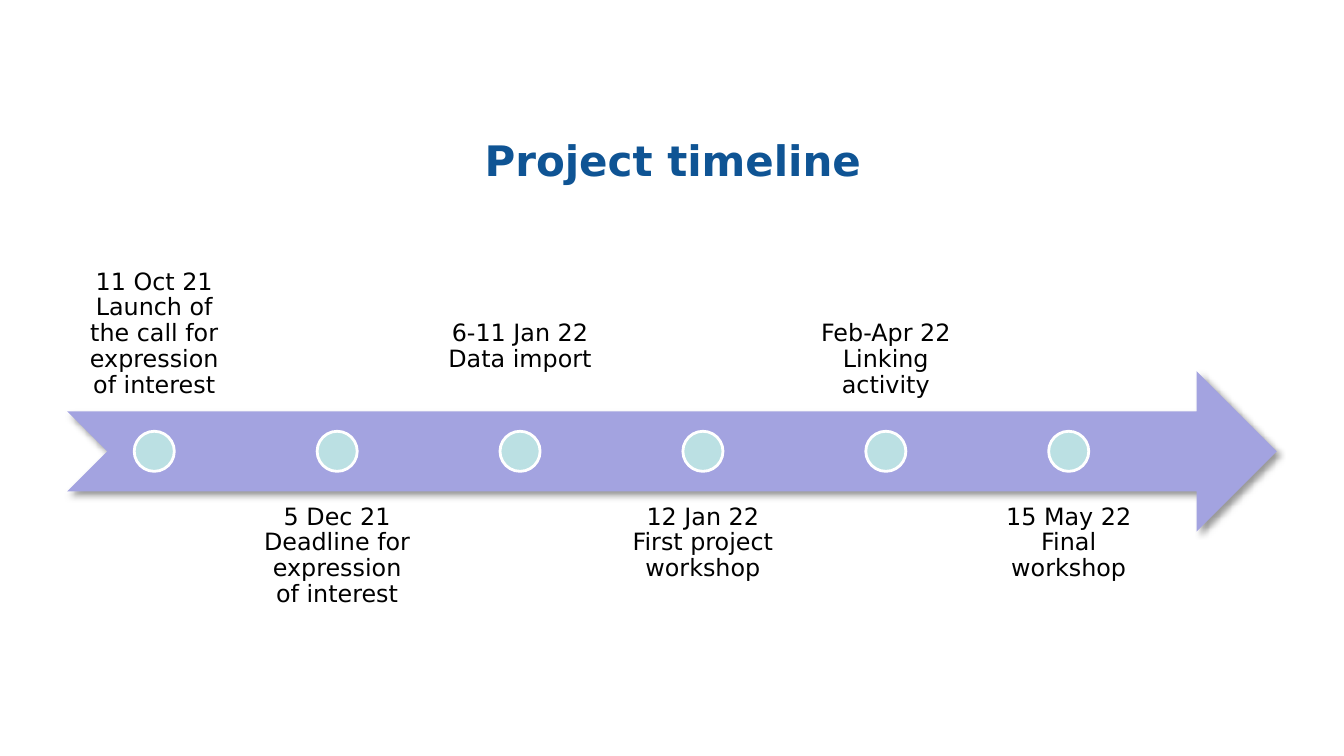
"""Build the project timeline slide."""
from dataclasses import dataclass

from lxml.etree import SubElement
from pptx import Presentation
from pptx.dml.color import RGBColor
from pptx.enum.shapes import MSO_SHAPE
from pptx.enum.text import MSO_ANCHOR, PP_ALIGN
from pptx.oxml.ns import qn
from pptx.util import Inches, Pt


@dataclass(frozen=True)
class Theme:
    font: str = "DejaVu Sans"
    title: str = "0F5494"
    text: str = "000000"
    arrow: str = "A3A3E0"
    dot: str = "BBE0E3"
    ring: str = "FFFFFF"
    shade: str = "000000"
    big: int = 30
    small: int = 17
    edge: int = 2


@dataclass(frozen=True)
class Box:
    left: float
    top: float
    width: float
    height: float

    def place(self) -> tuple:
        return tuple(map(Inches, (self.left, self.top, self.width, self.height)))


@dataclass(frozen=True)
class Event:
    text: str
    lift: float = 0


WIDE, HIGH = 13.33, 7.5
LOOK = Theme()
LEFT, SPAN = WIDE * 0.05, WIDE * 0.9
BAND = HIGH * 0.212
ROW = BAND * 0.75
TOP = HIGH * 0.332
LABEL = SPAN * 0.144
STEP = LABEL * 1.05
DOT = BAND / 4
LINE = 0.255

EVENTS = (
    Event("11 Oct 21 Launch of the call for expression of interest"),
    Event("5 Dec 21 Deadline for expression of interest"),
    Event("6-11 Jan 22 Data import", LINE),
    Event("12 Jan 22 First project workshop"),
    Event("Feb-Apr 22 Linking activity"),
    Event("15 May 22 Final workshop"),
)


def write(slide, box: Box, text: str, size: int, color: str,
          anchor: MSO_ANCHOR, bold: bool = False, space: float = 1.0) -> None:
    frame = slide.shapes.add_textbox(*box.place()).text_frame
    frame.word_wrap = True
    frame.vertical_anchor = anchor
    frame.margin_left = frame.margin_right = Inches(0.12)
    frame.margin_top = frame.margin_bottom = Inches(0.13)
    para = frame.paragraphs[0]
    para.text = text
    para.alignment = PP_ALIGN.CENTER
    para.line_spacing = space
    font = para.font
    font.name, font.size, font.bold = LOOK.font, Pt(size), bold
    font.color.rgb = RGBColor.from_string(color)


def draw(slide, kind: MSO_SHAPE, box: Box, fill: str):
    shape = slide.shapes.add_shape(kind, *box.place())
    shape.shadow.inherit = False
    shape.fill.solid()
    shape.fill.fore_color.rgb = RGBColor.from_string(fill)
    shape.line.fill.background()
    return shape


def shade(shape) -> None:
    effects = shape.element.spPr.find(qn("a:effectLst"))
    outer = SubElement(effects, qn("a:outerShdw"), blurRad=str(Pt(4)),
                       dist=str(Pt(3)), dir=str(45 * 60000), rotWithShape="0")
    color = SubElement(outer, qn("a:srgbClr"), val=LOOK.shade)
    SubElement(color, qn("a:alpha"), val="40000")


def mark(slide, index: int, event: Event) -> None:
    left = LEFT + index * STEP
    below = index % 2
    label = Box(left, TOP + 2 * ROW * below - event.lift, LABEL, BAND)
    anchor = MSO_ANCHOR.TOP if below else MSO_ANCHOR.BOTTOM
    write(slide, label, event.text, LOOK.small, LOOK.text, anchor, space=0.9)
    spot = Box(left + (LABEL - DOT) / 2, TOP + ROW + (BAND - DOT) / 2, DOT, DOT)
    dot = draw(slide, MSO_SHAPE.OVAL, spot, LOOK.dot)
    dot.line.color.rgb = RGBColor.from_string(LOOK.ring)
    dot.line.width = Pt(LOOK.edge)


def main() -> None:
    deck = Presentation()
    deck.slide_width, deck.slide_height = Inches(WIDE), Inches(HIGH)
    slide = deck.slides.add_slide(deck.slide_layouts[6])
    head = Box(LEFT + 0.01, HIGH * 0.143, SPAN, HIGH * 0.136)
    write(slide, head, "Project timeline", LOOK.big, LOOK.title,
          MSO_ANCHOR.MIDDLE, bold=True)
    band = Box(LEFT, TOP + ROW, SPAN, BAND)
    shade(draw(slide, MSO_SHAPE.NOTCHED_RIGHT_ARROW, band, LOOK.arrow))
    for index, event in enumerate(EVENTS):
        mark(slide, index, event)
    deck.save("out.pptx")


if __name__ == "__main__":
    main()
